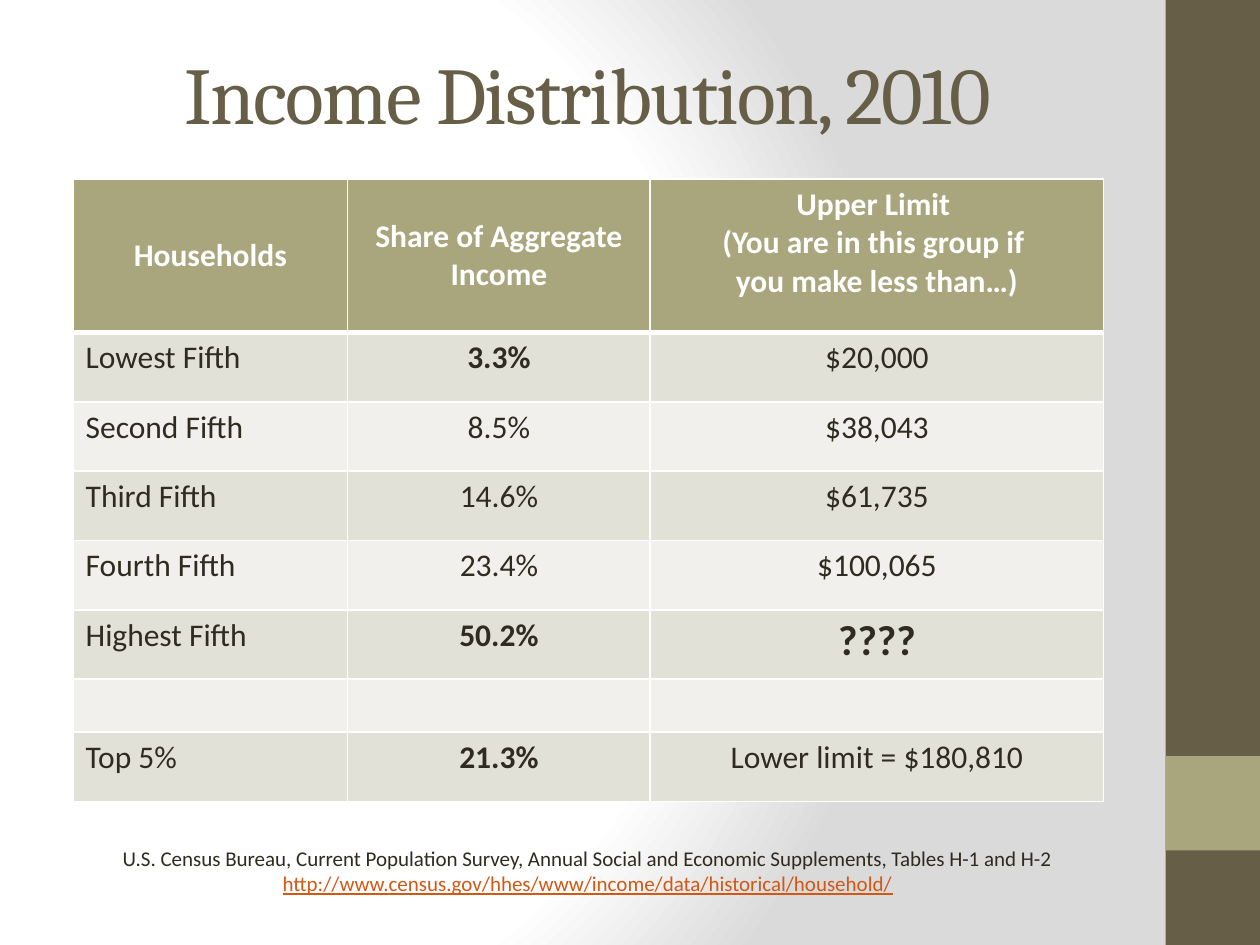
import pptx
import pptx.dml.color
import pptx.enum.shapes
import pptx.enum.text
import pptx.oxml
import pptx.oxml.ns
import pptx.util

PX = 9144  # 100 px to the inch
BROWN, OLIVE, INK, WHITE, ORANGE = "675E47", "A9A57C", "2F2B20", "FFFFFF", "D25814"
BANDS = ["E2E1D7", "F1F0EC"]
CENTER = pptx.enum.text.PP_ALIGN.CENTER
LEFT = pptx.enum.text.PP_ALIGN.LEFT
MIDDLE = pptx.enum.text.MSO_ANCHOR.MIDDLE
TOP = pptx.enum.text.MSO_ANCHOR.TOP

COLUMNS = [218, 240, 360]
ROW_HEIGHTS = [122, 55, 55, 55, 55, 55, 42, 55]
HEADINGS = [
    ["Households"],
    ["Share of Aggregate Income"],
    ["Upper Limit ", "(You are in this group if ", "you make less than…)"],
]
INCOMES = [
    ("Lowest Fifth", "3.3%", "$20,000"),
    ("Second Fifth", "8.5%", "$38,043"),
    ("Third Fifth", "14.6%", "$61,735"),
    ("Fourth Fifth", "23.4%", "$100,065"),
    ("Highest Fifth", "50.2%", "????"),
    ("", "", ""),
    ("Top 5%", "21.3%", "Lower limit = $180,810"),
]
BOLD = {"3.3%", "50.2%", "21.3%", "????"}


def px(*lengths):
    return [pptx.util.Emu(length * PX) for length in lengths]


def color(value):
    return pptx.dml.color.RGBColor.from_string(value)


def xml(markup):
    tag, rest = markup.split(" ", 1)
    return pptx.oxml.parse_xml(f"{tag} {pptx.oxml.ns.nsdecls('a')} {rest}")


def write(para, text, size=18, font="Calibri", ink=INK, bold=False,
          underline=False, align=CENTER, spacing=0):
    para.alignment = align
    span = para.add_run()
    span.text = text
    span.font.size = pptx.util.Pt(size)
    span.font.name = font
    span.font.bold = bold
    span.font.underline = underline
    span.font.color.rgb = color(ink)
    if spacing:
        span.font._element.set("spc", str(spacing * 100))


def add_paragraphs(frame, lines, **style):
    for index, line in enumerate(lines):
        para = frame.add_paragraph() if index else frame.paragraphs[0]
        write(para, line, **style)


def add_text_box(page, box, anchor):
    frame = page.shapes.add_textbox(*px(*box)).text_frame
    frame.word_wrap = True
    frame.vertical_anchor = anchor
    return frame


def paint_background(page):
    page.background.fill.solid()
    properties = page.background._cSld.bg.bgPr
    stops = "".join(f'<a:gs pos="{pos}000"><a:srgbClr val="{tone}"/></a:gs>'
                    for pos, tone in [(0, WHITE), (75, WHITE), (100, "DADADA")])
    gradient = xml(f'<a:gradFill rotWithShape="1"><a:gsLst>{stops}</a:gsLst>'
                   '<a:path path="circle"><a:fillToRect l="20000" t="50000" '
                   'r="100000" b="50000"/></a:path></a:gradFill>')
    properties.replace(properties[0], gradient)


def add_side_band(page, box):
    left, top, width, height = box
    accent = (left, top + height * 4 // 5, width, width)
    for area, tone in [(box, BROWN), (accent, OLIVE)]:
        band = page.shapes.add_shape(pptx.enum.shapes.MSO_SHAPE.RECTANGLE, *px(*area))
        band.shadow.inherit = False
        band.fill.solid()
        band.fill.fore_color.rgb = color(tone)
        band.line.fill.background()


def add_title(page, box):
    frame = add_text_box(page, box, MIDDLE)
    write(frame.paragraphs[0], "Income Distribution, 2010", size=46,
          font="Cambria", ink=BROWN, spacing=-1)


def style_cell(cell, fill, top=1, bottom=1):
    cell.fill.solid()
    cell.fill.fore_color.rgb = color(fill)
    properties = cell._tc.get_or_add_tcPr()
    for index, (side, points) in enumerate(zip("LRTB", (1, 1, top, bottom))):
        properties.insert(index, xml(
            f'<a:ln{side} w="{points * 12700}"><a:solidFill>'
            f'<a:srgbClr val="{WHITE}"/></a:solidFill></a:ln{side}>'))


def add_income_table(page, left, top):
    box = (left, top, sum(COLUMNS), sum(ROW_HEIGHTS))
    table = page.shapes.add_table(len(ROW_HEIGHTS), len(COLUMNS), *px(*box)).table
    for column, width in zip(table.columns, px(*COLUMNS)):
        column.width = width
    for row, height in zip(table.rows, px(*ROW_HEIGHTS)):
        row.height = height

    # Header row
    for index, lines in enumerate(HEADINGS):
        cell = table.cell(0, index)
        style_cell(cell, OLIVE, bottom=3)
        cell.vertical_anchor = TOP if len(lines) > 1 else MIDDLE
        add_paragraphs(cell.text_frame, lines, ink=WHITE, bold=True)

    # Banded body rows
    for number, values in enumerate(INCOMES, 1):
        for index, value in enumerate(values):
            cell = table.cell(number, index)
            style_cell(cell, BANDS[(number - 1) % 2], top=3 if number == 1 else 1)
            if value:
                write(cell.text_frame.paragraphs[0], value,
                      size=24 if value == "????" else 18,
                      bold=value in BOLD, align=CENTER if index else LEFT)


def add_source_note(page, box):
    frame = add_text_box(page, box, TOP)
    write(frame.paragraphs[0], "U.S. Census Bureau, Current Population Survey, Annual "
          "Social and Economic Supplements, Tables H-1 and H-2", size=12)
    write(frame.add_paragraph(),
          "http://www.census.gov/hhes/www/income/data/historical/household/",
          size=12, ink=ORANGE, underline=True)


def main():
    deck = pptx.Presentation()
    deck.slide_width, deck.slide_height = px(1000, 750)
    page = deck.slides.add_slide(deck.slide_layouts[6])
    paint_background(page)
    add_side_band(page, (925, 0, 75, 750))
    add_title(page, (50, 30, 833, 87))
    add_income_table(page, 58, 142)
    add_source_note(page, (8, 666, 917, 50))
    deck.save("out.pptx")


if __name__ == "__main__":
    main()
